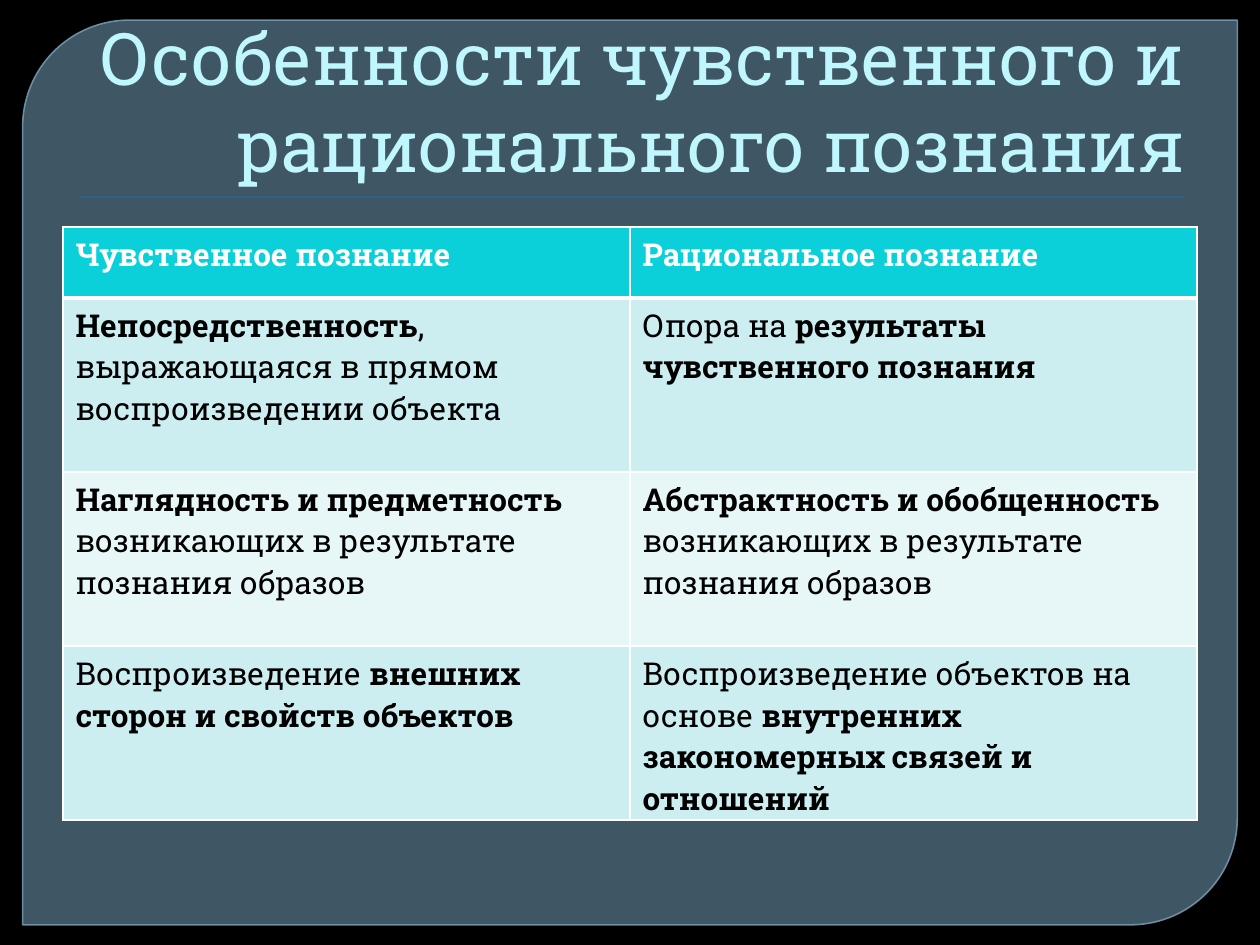
from lxml.etree import SubElement
from pptx import Presentation
from pptx.dml.color import RGBColor
from pptx.enum.shapes import MSO_SHAPE as SHAPE
from pptx.enum.text import MSO_ANCHOR as ANCHOR, PP_ALIGN as ALIGN
from pptx.oxml.ns import qn
from pptx.util import Inches, Pt

W, H = 10, 7.5
FONT = "Roboto Slab"
COLORS = {
    "back": "000000", "panel": "61869C", "edge": "779BB2", "rule": "0F6FC6",
    "title": "C0F7FF", "head": "0BD0D9", "odd": "CCEEF1", "even": "E7F7F8",
    "grid": "FFFFFF", "light": "FFFFFF", "dark": "000000",
}

TITLE = "Особенности чувственного и рационального познания"
# Each cell is a list of (text, bold) runs
ROWS = [
    [[("Чувственное познание", True)],
     [("Рациональное познание", True)]],
    [[("Непосредственность", True),
      (", выражающаяся в прямом воспроизведении объекта", False)],
     [("Опора на ", False), ("результаты чувственного познания", True)]],
    [[("Наглядность и предметность ", True),
      ("возникающих в результате познания образов", False)],
     [("Абстрактность и обобщенность ", True),
      ("возникающих в результате познания образов", False)]],
    [[("Воспроизведение ", False),
      ("внешних сторон и свойств объектов", True)],
     [("Воспроизведение объектов на основе ", False),
      ("внутренних закономерных связей и отношений", True)]],
]


def rgb(name):
    return RGBColor.from_string(COLORS[name])


def inches(box):
    return [Inches(v) for v in box]


def paint(fill, name, alpha=None):
    fill.solid()
    fill.fore_color.rgb = rgb(name)
    if alpha is not None:
        color = fill._xPr.find(qn("a:solidFill"))[0]
        SubElement(color, qn("a:alpha")).set("val", str(alpha * 1000))


def add_run(p, text, size, color, bold=False):
    r = p.add_run()
    r.text = text
    r.font.color.rgb = rgb(color)
    style = {"name": FONT, "size": Pt(size), "bold": bold}
    for key, value in style.items():
        setattr(r.font, key, value)


def add_panel(s, box):
    sp = s.shapes.add_shape(SHAPE.ROUND_2_DIAG_RECTANGLE, *inches(box))
    sp.shadow.inherit = False
    sp.adjustments[0], sp.adjustments[1] = 0.118, 0
    paint(sp.fill, "panel", 65)
    paint(sp.line.fill, "edge", 88)
    sp.line.width = Pt(0.87)


def add_rule(s, box):
    sp = s.shapes.add_shape(SHAPE.RECTANGLE, *inches(box))
    sp.shadow.inherit = False
    paint(sp.fill, "rule")
    sp.line.fill.background()


def add_title(s, box):
    tf = s.shapes.add_textbox(*inches(box)).text_frame
    for key, value in {"word_wrap": True, "vertical_anchor": ANCHOR.BOTTOM}.items():
        setattr(tf, key, value)
    p = tf.paragraphs[0]
    p.alignment = ALIGN.RIGHT
    add_run(p, TITLE, 41.4, "title")


def add_borders(cell, widths):
    tcPr = cell._tc.get_or_add_tcPr()
    for i, (side, width) in enumerate(widths.items()):
        ln = SubElement(tcPr, qn(f"a:ln{side}"), w=str(Pt(width)))
        fill = SubElement(ln, qn("a:solidFill"))
        SubElement(fill, qn("a:srgbClr"), val=COLORS["grid"])
        tcPr.insert(i, ln)  # borders come before the fill


def add_comparison(s, box, head_share=0.12):
    n_rows, n_cols = len(ROWS), len(ROWS[0])
    width, height = box[2:]
    table = s.shapes.add_table(n_rows, n_cols, *inches(box)).table
    for col in table.columns:
        col.width = Inches(width / n_cols)
    body = height * (1 - head_share) / (n_rows - 1)
    for i, row in enumerate(ROWS):
        table.rows[i].height = Inches(body if i else height * head_share)
        fill = ("even" if i % 2 == 0 else "odd") if i else "head"
        for j, runs in enumerate(row):
            cell = table.cell(i, j)
            paint(cell.fill, fill)
            add_borders(cell, {"L": 1, "R": 1, "T": 3 if i == 1 else 1,
                               "B": 1 if i else 3})
            for text, bold in runs:
                add_run(cell.text_frame.paragraphs[0], text, 18,
                        "dark" if i else "light", bold)


def main():
    prs = Presentation()
    prs.slide_width, prs.slide_height = Inches(W), Inches(H)
    s = prs.slides.add_slide(prs.slide_layouts[6])
    paint(s.background.fill, "back")

    margin = 0.05 * W
    inner = W - 2 * margin
    # Backdrop
    add_panel(s, (0.18, 0.16, W - 0.36, 7.18))
    add_rule(s, (0.64, 1.56, 8.75, 0.01))
    # Content
    add_title(s, (margin, 0.28, inner, H / 6))
    add_comparison(s, (margin, 0.24 * H, inner, 4.71))
    prs.save("out.pptx")


if __name__ == "__main__":
    main()
